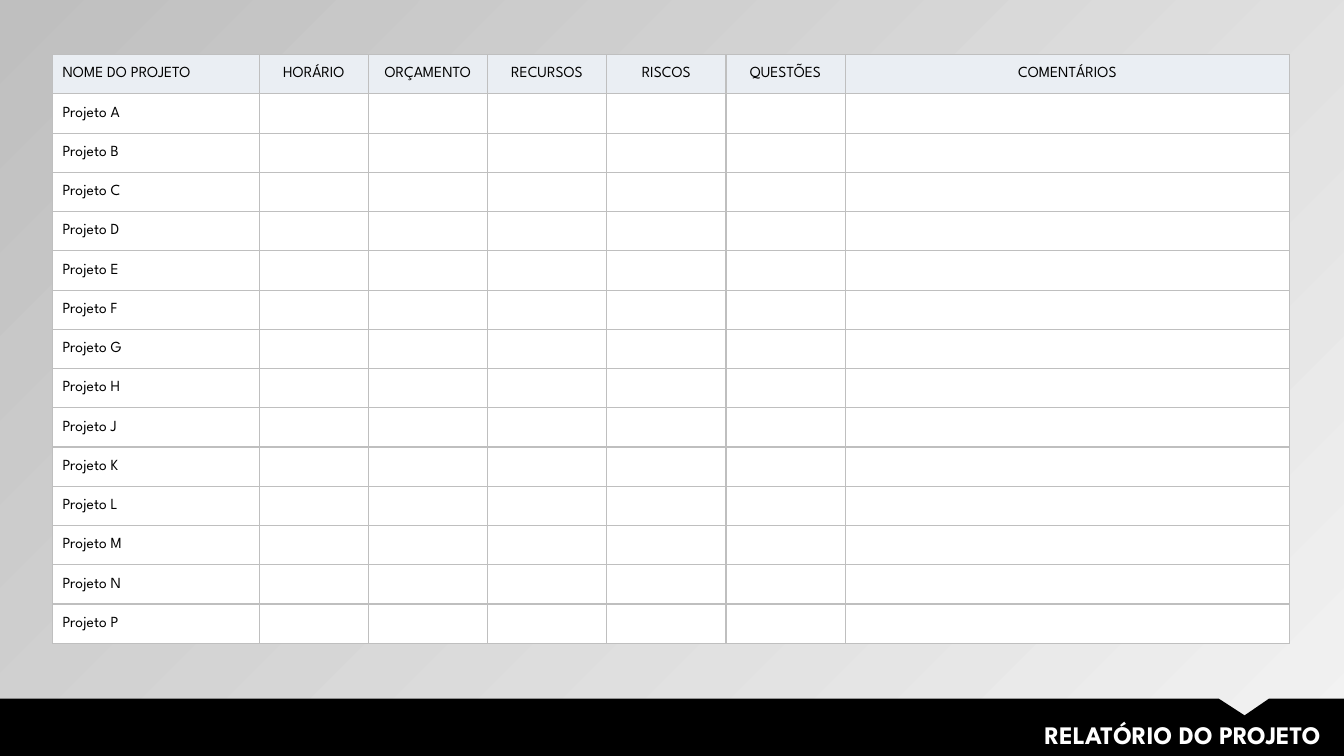
from dataclasses import dataclass

from lxml import etree
from pptx import Presentation, util as u
from pptx.dml.color import RGBColor
from pptx.enum import text
from pptx.oxml import ns


@dataclass(frozen=True)
class Theme:
    """Colours, font and type sizes of the report."""
    font: str = "League Spartan"
    table_size: float = 11
    title_size: float = 18
    ink: str = "000000"
    paper: str = "FFFFFF"
    header: str = "EAEEF3"
    border: str = "BFBFBF"
    glow: str = "F2F2F2"
    border_width: float = 1


class ReportSlide:
    """Draws the elements of one slide in a shared theme."""

    def __init__(self, slide, theme):
        self.slide = slide
        self.theme = theme

    def style(self, paragraph, size, color, align, bold=False):
        """Set the font and alignment of a paragraph."""
        paragraph.alignment = align
        font = paragraph.font
        font.name, font.size, font.bold = self.theme.font, u.Pt(size), bold
        font.color.rgb = RGBColor.from_string(color)

    def background(self, angle):
        """Fill the background with a diagonal gradient."""
        fill = self.slide.background.fill
        fill.gradient()
        fill.gradient_angle = angle
        for stop, color in zip(fill.gradient_stops, (self.theme.glow, self.theme.border)):
            stop.color.rgb = RGBColor.from_string(color)

    def borders(self, cell):
        """Draw a thin line on all four sides of a cell."""
        properties = cell._tc.get_or_add_tcPr()
        for index, side in enumerate(("lnL", "lnR", "lnT", "lnB")):
            line = etree.Element(ns.qn(f"a:{side}"), w=str(u.Pt(self.theme.border_width)))
            fill = etree.SubElement(line, ns.qn("a:solidFill"))
            etree.SubElement(fill, ns.qn("a:srgbClr"), val=self.theme.border)
            properties.insert(index, line)

    def cell(self, cell, words, fill, align):
        """Fill, frame and label one table cell."""
        cell.margin_left = cell.margin_right = u.Pt(7.2)
        cell.margin_top = cell.margin_bottom = 0
        cell.vertical_anchor = text.MSO_ANCHOR.MIDDLE
        cell.fill.solid()
        cell.fill.fore_color.rgb = RGBColor.from_string(fill)
        self.borders(cell)
        cell.text = words
        self.style(cell.text_frame.paragraphs[0], self.theme.table_size, self.theme.ink, align)

    def table(self, left, top, widths, row_height, headings, names):
        """Add a table with a heading row and one named row per project."""
        rows = [headings] + [[name] + [""] * (len(headings) - 1) for name in names]
        frame = self.slide.shapes.add_table(
            len(rows), len(widths), u.Pt(left), u.Pt(top),
            u.Pt(sum(widths)), u.Pt(row_height * len(rows)))
        table = frame.table
        for column, width in zip(table.columns, widths):
            column.width = u.Pt(width)
        for r, row in enumerate(rows):
            table.rows[r].height = u.Pt(row_height)
            fill = self.theme.paper if r else self.theme.header
            for c, words in enumerate(row):
                align = text.PP_ALIGN.CENTER if c else text.PP_ALIGN.LEFT
                self.cell(table.cell(r, c), words, fill, align)

    def outline(self, points, color):
        """Add a closed, filled outline through the points."""
        start, *others = [(u.Pt(x), u.Pt(y)) for x, y in points]
        builder = self.slide.shapes.build_freeform(*start)
        builder.add_line_segments(others, close=True)
        shape = builder.convert_to_shape()
        shape.shadow.inherit = False
        shape.fill.solid()
        shape.fill.fore_color.rgb = RGBColor.from_string(color)
        shape.line.fill.background()

    def title(self, left, top, width, height, words):
        """Add the right-aligned slide title."""
        box = self.slide.shapes.add_textbox(*map(u.Pt, (left, top, width, height)))
        box.text_frame.word_wrap = True
        paragraph = box.text_frame.paragraphs[0]
        paragraph.text = words
        self.style(paragraph, self.theme.title_size, self.theme.paper,
                   text.PP_ALIGN.RIGHT, bold=True)


def main():
    """Build and save the project report slide."""
    width, height, band_top = 960, 540, 499
    presentation = Presentation()
    presentation.slide_width, presentation.slide_height = u.Pt(width), u.Pt(height)
    slide = presentation.slides.add_slide(presentation.slide_layouts[6])
    theme = Theme()
    report = ReportSlide(slide, theme)
    report.background(135)
    report.table(
        37.5, 39, [148, 77.5, 85.2, 85.2, 85.2, 85.2, 317.5], 28.05,
        ["NOME DO PROJETO", "HORÁRIO", "ORÇAMENTO", "RECURSOS", "RISCOS",
         "QUESTÕES", "COMENTÁRIOS"],
        [f"Projeto {letter}" for letter in "ABCDEFGHJKLMNP"])
    report.outline(
        [(0, band_top), (870.5, band_top), (889, 511), (906.5, band_top),
         (width, band_top), (width, height), (0, height)], theme.ink)
    report.title(298, 510, 652.5, 29, "RELATÓRIO DO PROJETO")
    presentation.save("out.pptx")


if __name__ == "__main__":
    main()
